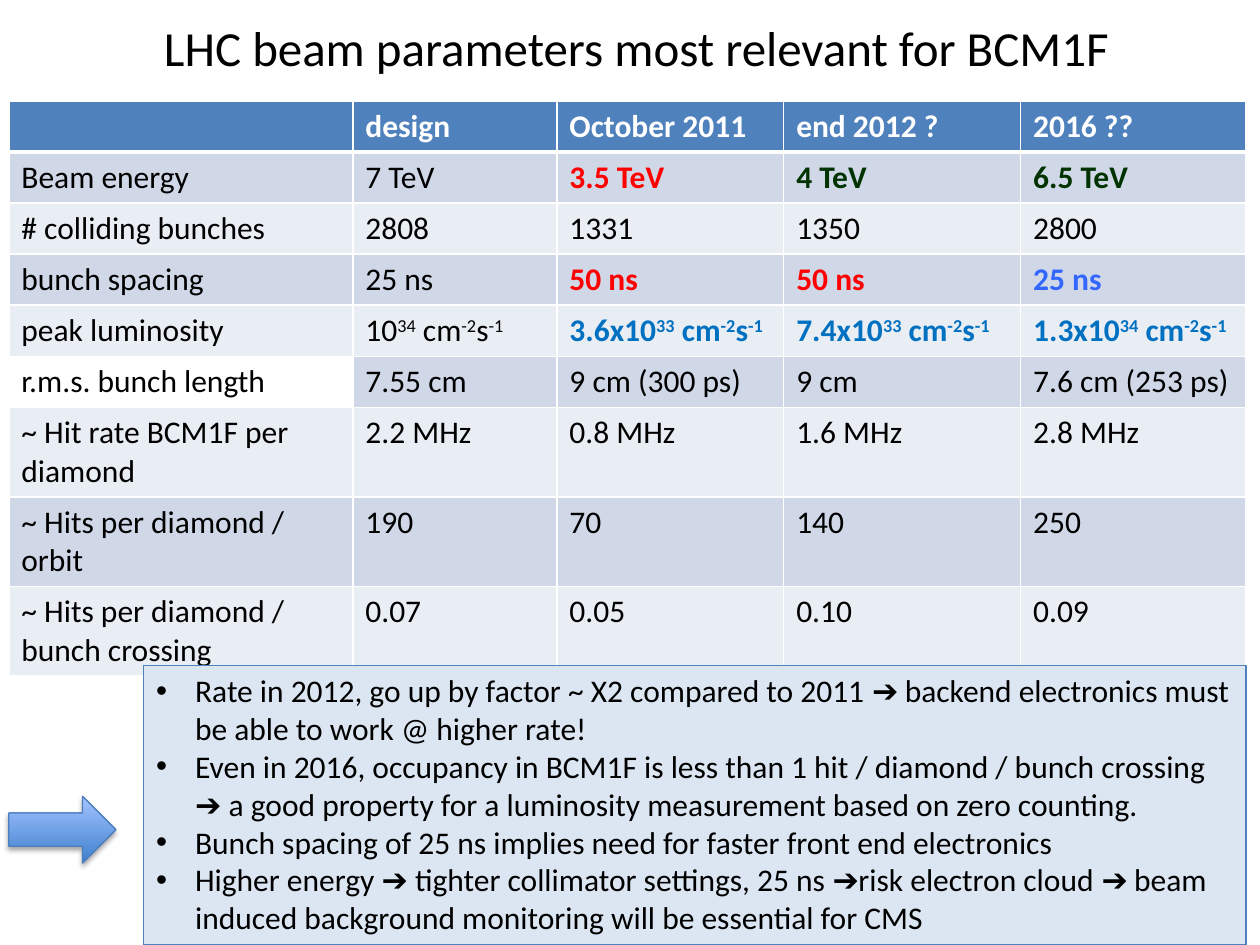
from dataclasses import dataclass

from lxml import etree
from pptx import Presentation
from pptx import util as u
from pptx.dml.color import RGBColor
from pptx.enum import shapes, text
from pptx.oxml.ns import qn


@dataclass(frozen=True)
class Theme:
    font: str = "Calibri"
    title_size: int = 28
    body_size: int = 18
    ink: str = "000000"
    white: str = "FFFFFF"
    header: str = "4F81BD"
    bands: tuple = ("E9EDF4", "D0D8E8")
    panel: str = "DCE6F2"
    arrow_line: str = "4B7EBC"
    arrow_stops: tuple = ("3F80CE", "A4C4FF")
    red: str = "FF0000"
    green: str = "003300"
    blue: str = "3366FF"
    azure: str = "0070C0"


def assign(target, values):
    for name, value in values.items():
        setattr(target, name, value)


def add_node(parent, tag, **values):
    return etree.SubElement(parent, qn(tag), {k: str(v) for k, v in values.items()})


def add_color(parent, color):
    return add_node(parent, "a:srgbClr", val=color)


class SlideBuilder:
    def __init__(self, slide, theme):
        self.slide = slide
        self.theme = theme

    def add_spans(self, para, content, size, color, bold=False):
        for index, piece in enumerate(content.split("^")):
            if not piece:
                continue
            span = para.add_run()
            span.text = piece
            assign(span.font, {"name": self.theme.font, "size": u.Pt(size), "bold": bold})
            span.font.color.rgb = RGBColor.from_string(color)
            if index % 2:
                span.font._element.set("baseline", "30000")

    def title(self, content, bounds):
        box = self.slide.shapes.add_textbox(*map(u.Inches, bounds))
        box.text_frame.word_wrap = True
        para = box.text_frame.paragraphs[0]
        para.alignment = text.PP_ALIGN.CENTER
        self.add_spans(para, content, self.theme.title_size, self.theme.ink)

    def border(self, cell, sides):
        properties = cell._tc.get_or_add_tcPr()
        for side, points in sides.items():
            line = add_node(properties, f"a:ln{side}", w=u.Pt(points))
            add_color(add_node(line, "a:solidFill"), self.theme.white)

    def table(self, rows, origin, widths, heights, accents, unfilled):
        theme = self.theme
        size = (sum(widths), sum(heights))
        frame = self.slide.shapes.add_table(
            len(rows), len(widths), *map(u.Inches, origin + size))
        table = frame.table
        table.horz_banding = False
        for column, width in zip(table.columns, widths):
            column.width = u.Inches(width)
        for row, height in zip(table.rows, heights):
            row.height = u.Inches(height)
        for r, row in enumerate(rows):
            for c, content in enumerate(row):
                cell = table.cell(r, c)
                self.border(cell, {"L": 1, "R": 1, "T": 3 if r == 1 else 1,
                                   "B": 3 if r == 0 else 1})
                if (r, c) in unfilled:
                    cell.fill.background()
                else:
                    cell.fill.solid()
                    fill = theme.bands[r % 2] if r else theme.header
                    cell.fill.fore_color.rgb = RGBColor.from_string(fill)
                color = accents.get((r, c), theme.ink if r else theme.white)
                self.add_spans(cell.text_frame.paragraphs[0], content, theme.body_size,
                               color, bold=color != theme.ink)

    def shape(self, kind, bounds, line):
        shape = self.slide.shapes.add_shape(kind, *map(u.Inches, bounds))
        shape.shadow.inherit = False
        shape.line.color.rgb = RGBColor.from_string(line)
        shape.line.width = u.Pt(0.75)
        return shape

    def arrow(self, bounds):
        arrow = self.shape(shapes.MSO_SHAPE.RIGHT_ARROW, bounds, self.theme.arrow_line)
        arrow.fill.gradient()
        arrow.fill.gradient_angle = 90
        for stop, color, position in zip(
                arrow.fill.gradient_stops, self.theme.arrow_stops, (0, 1)):
            stop.color.rgb = RGBColor.from_string(color)
            stop.position = position
        effects = arrow._element.spPr.find(qn("a:effectLst"))
        shadow = add_node(effects, "a:outerShdw", blurRad=u.Pt(3.1), dist=u.Pt(1.8),
                          dir=5400000, rotWithShape=0)
        add_node(add_color(shadow, self.theme.ink), "a:alpha", val=35000)

    def bullet_panel(self, items, bounds):
        theme = self.theme
        panel = self.shape(shapes.MSO_SHAPE.RECTANGLE, bounds, theme.header)
        panel.fill.solid()
        panel.fill.fore_color.rgb = RGBColor.from_string(theme.panel)
        frame = panel.text_frame
        assign(frame, {"word_wrap": True, "vertical_anchor": text.MSO_ANCHOR.TOP})
        for index, item in enumerate(items):
            para = frame.add_paragraph() if index else frame.paragraphs[0]
            para.alignment = text.PP_ALIGN.LEFT
            properties = para._p.get_or_add_pPr()
            indent = u.Inches(0.31)
            properties.set("marL", str(indent))
            properties.set("indent", str(-indent))
            add_node(properties, "a:buFont", typeface="Arial")
            add_node(properties, "a:buChar", char="•")
            self.add_spans(para, item, theme.body_size, theme.ink)


def main():
    theme = Theme()
    deck = Presentation()
    assign(deck, {"slide_width": u.Inches(10), "slide_height": u.Inches(7.5)})
    page = SlideBuilder(deck.slides.add_slide(deck.slide_layouts[6]), theme)

    unit = " cm^-2^s^-1^"
    rows = [
        ("", "design", "October 2011", "end 2012 ?", "2016 ??"),
        ("Beam energy", "7 TeV", "3.5 TeV", "4 TeV", "6.5 TeV"),
        ("# colliding bunches", "2808", "1331", "1350", "2800"),
        ("bunch spacing", "25 ns", "50 ns", "50 ns", "25 ns"),
        ("peak luminosity", "10^34^" + unit, "3.6x10^33^" + unit,
         "7.4x10^33^" + unit, "1.3x10^34^" + unit),
        ("r.m.s. bunch length", "7.55 cm", "9 cm (300 ps)", "9 cm", "7.6 cm (253 ps)"),
        ("~ Hit rate BCM1F per diamond", "2.2 MHz", "0.8 MHz", "1.6 MHz", "2.8 MHz"),
        ("~ Hits per diamond / orbit", "190", "70", "140", "250"),
        ("~ Hits per diamond / bunch crossing", "0.07", "0.05", "0.10", "0.09"),
    ]
    accents = {
        (1, 2): theme.red, (1, 3): theme.green, (1, 4): theme.green,
        (3, 2): theme.red, (3, 3): theme.red, (3, 4): theme.blue,
        **{(4, column): theme.azure for column in (2, 3, 4)},
    }
    page.table(rows, (0.07, 0.8), (2.73, 1.62, 1.8, 1.88, 1.79),
               (0.4,) * 6 + (0.7,) * 3, accents, unfilled={(5, 0)})
    page.title("LHC beam parameters most relevant for BCM1F", (0.05, 0.09, 10, 0.91))
    page.arrow((0.07, 6.32, 0.85, 0.53))
    page.bullet_panel([
        "Rate in 2012, go up by factor ~ X2 compared to 2011 ➔ backend electronics "
        "must be able to work @ higher rate!",
        "Even in 2016, occupancy in BCM1F is less than 1 hit / diamond / bunch crossing "
        "➔ a good property for a luminosity measurement based on zero counting.",
        "Bunch spacing of 25 ns implies need for faster front end electronics",
        "Higher energy ➔ tighter collimator settings, 25 ns ➔risk electron cloud ➔ beam "
        "induced background monitoring will be essential for CMS",
    ], (1.14, 5.28, 8.75, 2.22))
    deck.save("out.pptx")


if __name__ == "__main__":
    main()
